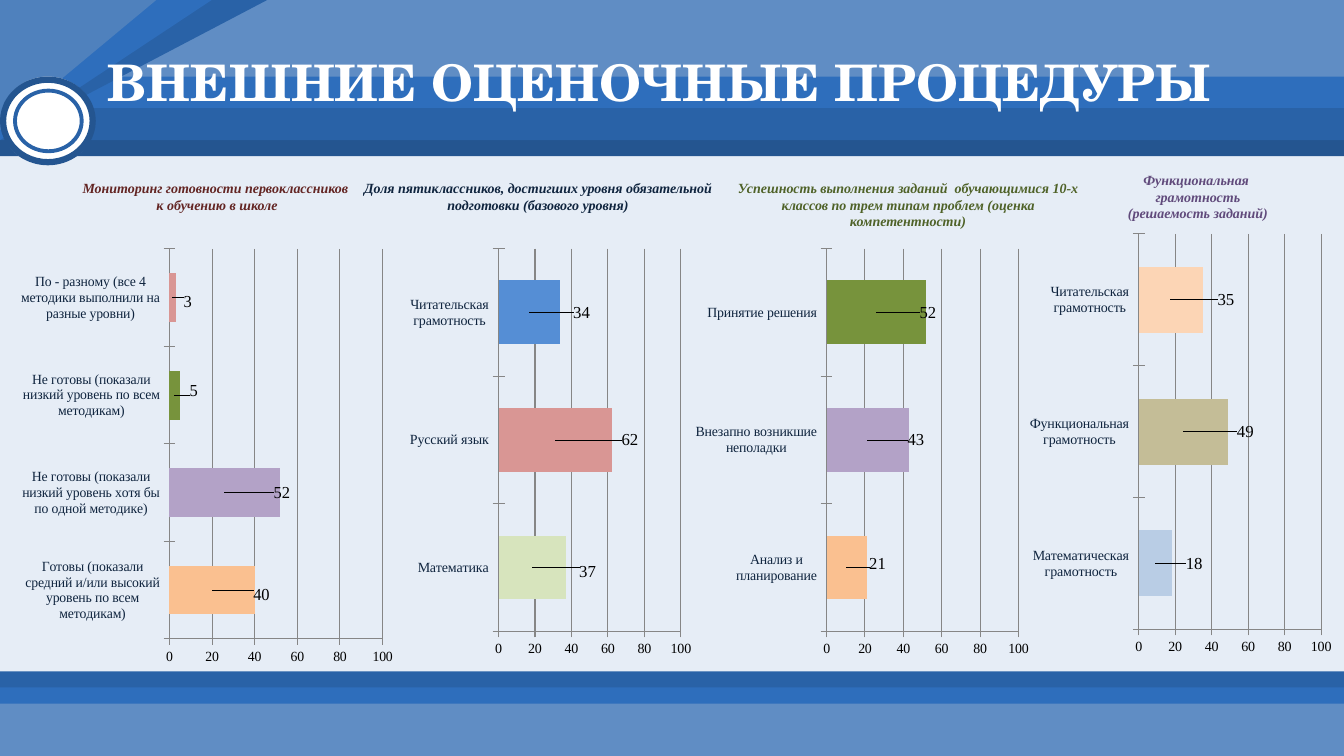
from lxml import etree
from pptx import Presentation
from pptx.chart.data import CategoryChartData
from pptx.dml.color import RGBColor
from pptx.enum import chart as ch, shapes, text
from pptx.oxml.ns import qn
from pptx.util import Inches, Pt

COLORS = {
    "background": "E6EDF6", "white": "FFFFFF", "black": "000000", "axis": "868686",
    "navy": "245590", "blue": "2962A7", "bright": "2E6EBC", "light": "608DC4",
    "corner": "4F81BD", "label": "0F243E", "maroon": "632523", "moss": "4F6228",
    "plum": "604A7B", "orange": "FAC090", "lilac": "B3A2C7", "green": "77933C",
    "rose": "D99694", "lime": "D7E4BD", "sky": "558ED5", "ice": "B9CDE5",
    "sand": "C4BD97", "peach": "FCD5B5",
}
SERIF = "Times New Roman"
SHAPE = shapes.MSO_SHAPE

# kind, box, colour, adjustment
DECOR = [
    (SHAPE.RECTANGLE, (0, 6.66, 13.33, 0.84), "blue", None),
    (SHAPE.RECTANGLE, (0, 6.82, 13.33, 0.68), "bright", None),
    (SHAPE.RECTANGLE, (0, 6.98, 13.33, 0.52), "light", None),
    (SHAPE.RECTANGLE, (0, 0, 13.33, 1.55), "navy", None),
    (SHAPE.RECTANGLE, (0, 0, 13.33, 1.39), "blue", None),
    (SHAPE.RECTANGLE, (0, 0, 13.33, 1.07), "bright", None),
    (SHAPE.RECTANGLE, (0, 0, 13.33, 0.76), "light", None),
    (SHAPE.DIAGONAL_STRIPE, (0, 0, 2.65, 1.39), "blue", 0),
    (SHAPE.DIAGONAL_STRIPE, (0, 0, 2.1, 1.39), "bright", 0),
    (SHAPE.DIAGONAL_STRIPE, (0, 0, 1.55, 1.29), "corner", 0),
    (SHAPE.OVAL, (0.01, 0.76, 0.93, 0.88), "white", None),
    (SHAPE.DONUT, (0, 0.76, 0.95, 0.88), "navy", 0.07),
    (SHAPE.DONUT, (0.13, 0.88, 0.7, 0.64), "blue", 0.06),
]

HEADINGS = [
    ("Мониторинг готовности первоклассников\v к обучению в школе",
     (0.26, 1.48, 3.75, 0.94), "maroon"),
    ("Доля пятиклассников, достигших уровня обязательной подготовки (базового уровня)",
     (3.46, 1.48, 3.75, 0.94), "label"),
    ("Успешность выполнения заданий  обучающимися 10-х классов по трем типам проблем "
     "(оценка компетентности)", (7.13, 1.56, 3.75, 0.94), "moss"),
    ("Функциональная \nграмотность\n(решаемость заданий)",
     (10.42, 1.48, 2.92, 0.94), "plum"),
]

# box, then bars from the bottom up: category, value, colour, label shift (x, y)
CHARTS = [
    ((0.21, 2.34, 3.85, 4.3), [
        ("Готовы (показали средний и/или высокий уровень по всем методикам)",
         40, "orange", (0.13, 0.01)),
        ("Не готовы (показали низкий уровень хотя бы по одной методике)",
         52, "lilac", (0.15, 0)),
        ("Не готовы (показали низкий уровень по всем методикам)",
         5, "green", (0.05, -0.01)),
        ("По - разному (все 4 методики выполнили на разные уровни)",
         3, "rose", (0.04, 0.01))]),
    ((3.75, 2.34, 3.23, 4.22), [
        ("Математика", 37, "lime", (0.17, 0.01)),
        ("Русский язык", 62, "rose", (0.23, 0)),
        ("Читательская грамотность", 34, "sky", (0.16, 0))]),
    ((6.9, 2.34, 3.44, 4.22), [
        ("Анализ и планирование", 21, "orange", (0.09, -0.01)),
        ("Внезапно возникшие неполадки", 43, "lilac", (0.14, 0)),
        ("Принятие решения", 52, "green", (0.15, 0))]),
    ((10.1, 2.19, 3.23, 4.36), [
        ("Математическая грамотность", 18, "ice", (0.12, 0)),
        ("Функциональная грамотность", 49, "sand", (0.19, 0)),
        ("Читательская грамотность", 35, "peach", (0.17, 0))]),
]


def rgb(name):
    return RGBColor.from_string(COLORS[name])


def inches(box):
    return [Inches(length) for length in box]


def paint(fill, color):
    fill.solid()
    fill.fore_color.rgb = rgb(color)


def style_font(font, size, color, name=SERIF, bold=None, italic=None):
    font.size, font.name, font.bold, font.italic = Pt(size), name, bold, italic
    font.color.rgb = rgb(color)


def add_decor(page, kind, box, color, adjustment):
    shape = page.shapes.add_shape(kind, *inches(box))
    shape.shadow.inherit = False
    paint(shape.fill, color)
    shape.line.fill.background()
    if adjustment is not None:
        shape.adjustments[0] = adjustment


def write(shape, wording, **font):
    frame = shape.text_frame
    frame.text = wording
    frame.word_wrap = True
    frame.auto_size = text.MSO_AUTO_SIZE.NONE
    frame.vertical_anchor = text.MSO_ANCHOR.MIDDLE
    for para in frame.paragraphs:
        para.alignment = text.PP_ALIGN.CENTER
        for span in para.runs:
            style_font(span.font, **font)


def add_layout(parent, index, **settings):
    """Give a plot area or a data label a manual layout."""
    for old in parent.findall(qn("c:layout")):
        parent.remove(old)
    layout = etree.Element(qn("c:layout"))
    parent.insert(index, layout)
    manual = etree.SubElement(layout, qn("c:manualLayout"))
    for tag, value in settings.items():
        etree.SubElement(manual, qn(f"c:{tag}")).set("val", str(value))


def style_axis(axis, color):
    axis.major_tick_mark = ch.XL_TICK_MARK.CROSS
    axis.format.line.color.rgb = rgb("axis")
    style_font(axis.tick_labels.font, 10, color)


def add_bar_chart(page, box, bars):
    data = CategoryChartData()
    data.categories = [category for category, *_ in bars]
    data.add_series("Series 1", [value for _, value, *_ in bars])
    chart = page.shapes.add_chart(
        ch.XL_CHART_TYPE.BAR_STACKED, *inches(box), data).chart
    chart.has_legend = chart.has_title = False
    style_font(chart.font, 10, "black", "Calibri")
    style_axis(chart.category_axis, "label")
    chart.category_axis.has_major_gridlines = False
    scale = chart.value_axis
    style_axis(scale, "black")
    scale.minimum_scale, scale.maximum_scale, scale.major_unit = 0, 100, 20
    scale.has_major_gridlines = True
    scale.major_gridlines.format.line.color.rgb = rgb("axis")

    plot = chart.plots[0]
    plot.gap_width, plot.overlap, plot.vary_by_categories = 100, 100, False
    series = plot.series[0]
    paint(series.format.fill, "corner")
    series.data_labels.show_value = True
    style_font(series.data_labels.font, 12, "black")
    for index, (_, _, color, _) in enumerate(bars):
        point = series.points[index]
        paint(point.format.fill, color)
        style_font(point.data_label.font, 12, "black")
    for label, bar in zip(chart.element.iter(qn("c:dLbl")), bars):
        x, y = bar[3]
        add_layout(label, 1, x=x, y=y)
    area = next(chart.element.iter(qn("c:plotArea")))
    add_layout(area, 0, layoutTarget="inner", xMode="edge", yMode="edge",
               x=0.37, y=0.03, w=0.56, h=0.9)


def main():
    deck = Presentation()
    deck.slide_width, deck.slide_height = Inches(13.33), Inches(7.5)
    page = deck.slides.add_slide(deck.slide_layouts[5])
    paint(page.background.fill, "background")
    for decor in DECOR:
        add_decor(page, *decor)
    for box, bars in CHARTS:
        add_bar_chart(page, box, bars)
    for wording, box, color in HEADINGS:
        write(page.shapes.add_textbox(*inches(box)), wording,
              size=10, color=color, bold=True, italic=True)

    title = page.shapes.title
    title.left, title.top, title.width, title.height = inches((0.88, 0, 11.33, 1.61))
    write(title, "ВНЕШНИЕ ОЦЕНОЧНЫЕ ПРОЦЕДУРЫ",
          size=36, color="white", name="TeX Gyre Schola", bold=True)
    title.element.getparent().append(title.element)  # bring above the header bands
    deck.save("out.pptx")


if __name__ == "__main__":
    main()
